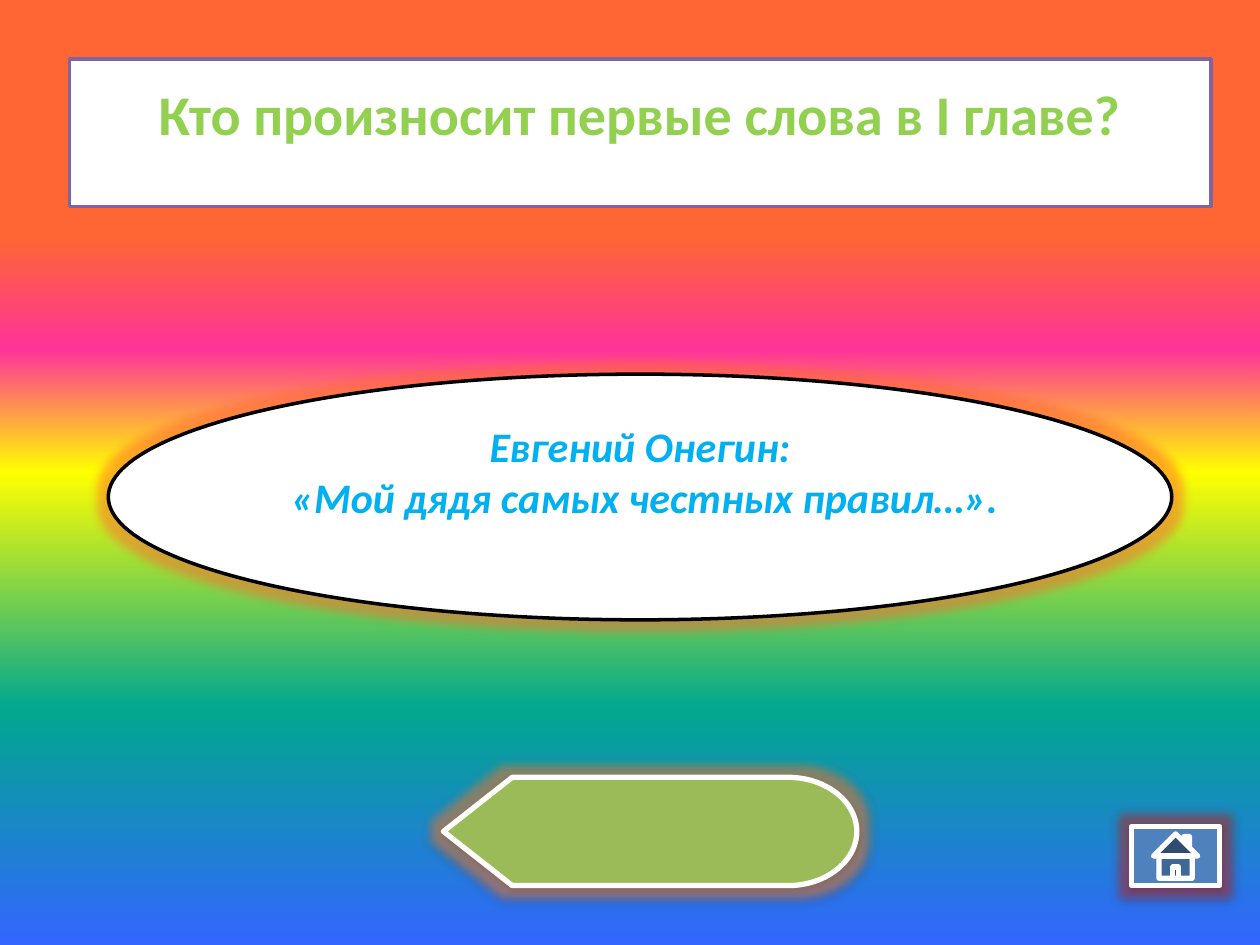
from dataclasses import dataclass
from typing import Optional

from lxml import etree
from pptx import Presentation
from pptx import util as u
from pptx.dml.color import RGBColor
from pptx.enum import shapes, text
from pptx.oxml.ns import qn

WHITE = RGBColor(0xFF, 0xFF, 0xFF)
BLACK = RGBColor(0, 0, 0)
PURPLE = RGBColor(0x80, 0x64, 0xA2)
LIME = RGBColor(0x92, 0xD0, 0x50)
SKY = RGBColor(0x00, 0xB0, 0xF0)
OLIVE = RGBColor(0x9B, 0xBB, 0x59)
BLUE = RGBColor(0x4F, 0x81, 0xBD)
ORANGE = RGBColor(0xFF, 0x66, 0x33)
AMBER = RGBColor(0xFF, 0x8A, 0x3C)
RED = RGBColor(0xC8, 0x32, 0x2F)
RAINBOW = [
    (25, ORANGE),
    (37, RGBColor(0xFF, 0x33, 0x99)),
    (50, RGBColor(0xFF, 0xFF, 0x00)),
    (75, RGBColor(0x01, 0xA7, 0x8F)),
    (100, RGBColor(0x33, 0x66, 0xFF)),
]
GLOW_RADIUS = u.Pt(11)


@dataclass
class Panel:
    kind: shapes.MSO_SHAPE
    place: tuple[float, float, float, float]
    fill: RGBColor
    line: RGBColor
    width: float
    glow: RGBColor
    shadow: bool = False


PLATE = Panel(shapes.MSO_SHAPE.FLOWCHART_DISPLAY, (253.4, 444.2, 236.2, 61.9),
              OLIVE, WHITE, 3, AMBER, True)
ANSWER = Panel(shapes.MSO_SHAPE.FLOWCHART_CONNECTOR, (61.9, 213.8, 607.7, 140.4),
               WHITE, BLACK, 2, ORANGE)
HOME = Panel(shapes.MSO_SHAPE.ACTION_BUTTON_HOME, (646.6, 472.3, 50.4, 33.8),
             BLUE, WHITE, 3, RED, True)


def add_color(parent, color: RGBColor, alpha: Optional[int] = None) -> None:
    node = etree.SubElement(parent, qn("a:srgbClr"), val=str(color))
    if alpha is not None:
        etree.SubElement(node, qn("a:alpha"), val=str(alpha * 1000))


def paint(shape, fill: RGBColor, line: RGBColor, width: float) -> None:
    shape.fill.solid()
    shape.fill.fore_color.rgb = fill
    shape.line.color.rgb = line
    shape.line.width = u.Pt(width)


def paint_background(slide) -> None:
    fill = slide.background.fill
    fill.gradient()
    fill.gradient_angle = 270
    stops = slide.element.find(".//" + qn("a:gsLst"))
    for stop in list(stops):
        stops.remove(stop)
    for percent, color in RAINBOW:
        add_color(etree.SubElement(stops, qn("a:gs"), pos=str(percent * 1000)), color)


def draw_panel(slide, panel: Panel):
    shape = slide.shapes.add_shape(panel.kind, *map(u.Pt, panel.place))
    paint(shape, panel.fill, panel.line, panel.width)
    shape.shadow.inherit = False
    effects = shape.element.spPr.find(qn("a:effectLst"))
    glow = etree.SubElement(effects, qn("a:glow"), rad=str(GLOW_RADIUS))
    add_color(glow, panel.glow, 50)
    if panel.shadow:
        drop = etree.SubElement(
            effects, qn("a:outerShdw"), blurRad=str(u.Pt(3.1)),
            dist=str(u.Pt(1.6)), dir="5400000", rotWithShape="0")
        add_color(drop, BLACK, 38)
    return shape


def write_text(shape, lines: list[str], size: float, color: RGBColor,
               italic: bool, bottom: float) -> None:
    frame = shape.text_frame
    settings = {
        "word_wrap": True,
        "auto_size": text.MSO_AUTO_SIZE.NONE,
        "vertical_anchor": text.MSO_ANCHOR.MIDDLE,
        "margin_bottom": u.Pt(bottom),
    }
    for name, value in settings.items():
        setattr(frame, name, value)
    formats = {"name": "Calibri", "size": u.Pt(size), "bold": True, "italic": italic}
    for index, line in enumerate(lines):
        para = frame.add_paragraph() if index else frame.paragraphs[0]
        para.alignment = text.PP_ALIGN.CENTER
        span = para.add_run()
        span.text = line
        for name, value in formats.items():
            setattr(span.font, name, value)
        span.font.color.rgb = color


def draw_title(slide) -> None:
    title = slide.shapes.title
    place = {"left": 39.6, "top": 33.8, "width": 652.3, "height": 84.2}
    for name, value in place.items():
        setattr(title, name, u.Pt(value))
    # Bevelled frame for the title placeholder
    outline = etree.SubElement(title.element.spPr, qn("a:prstGeom"), prst="bevel")
    etree.SubElement(outline, qn("a:avLst"))
    paint(title, WHITE, PURPLE, 2)
    write_text(title, ["Кто произносит первые слова в I главе?"], 32, LIME, False, 25.6)


def main() -> None:
    deck = Presentation()
    deck.slide_width, deck.slide_height = u.Pt(720), u.Pt(540)
    slide = deck.slides.add_slide(deck.slide_layouts[5])
    paint_background(slide)

    # Question
    draw_title(slide)

    # Plate, answer and home button
    draw_panel(slide, PLATE)
    answer = draw_panel(slide, ANSWER)
    write_text(answer, ["Евгений Онегин:", " «Мой дядя самых честных правил…»."],
               24, SKY, True, 33)
    draw_panel(slide, HOME)

    deck.save("out.pptx")


if __name__ == "__main__":
    main()
